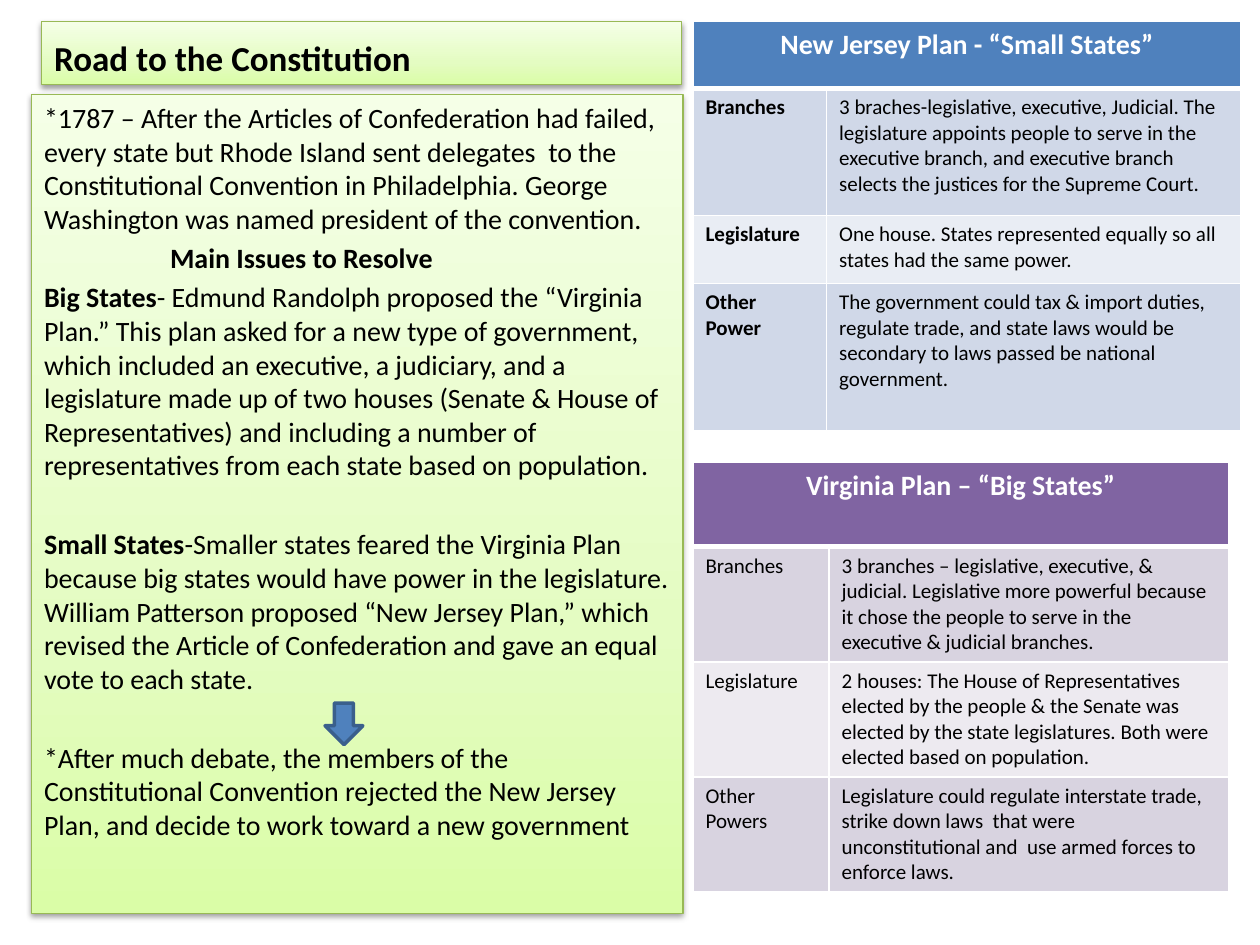
"""Build the Road to the Constitution slide."""
from pptx import Presentation
from pptx import oxml, util as u
from pptx.dml.color import RGBColor
from pptx.enum import shapes, text
from pptx.oxml import ns

BLACK = RGBColor(0x00, 0x00, 0x00)
WHITE = RGBColor(0xFF, 0xFF, 0xFF)
GREEN = RGBColor(0x98, 0xB9, 0x55)
BLUE = RGBColor(0x4F, 0x81, 0xBD)
NAVY = RGBColor(0x3A, 0x5F, 0x8C)
SKY = (RGBColor(0xD0, 0xD8, 0xE8), RGBColor(0xE9, 0xED, 0xF4))
PURPLE = RGBColor(0x80, 0x64, 0xA2)
LILAC = (RGBColor(0xD8, 0xD3, 0xE0), RGBColor(0xED, 0xEA, 0xF0))
STOPS = (
    (0, RGBColor(0xDA, 0xFD, 0xA7)),
    (35, RGBColor(0xE4, 0xFC, 0xC2)),
    (100, RGBColor(0xF5, 0xFF, 0xE7)),
)

STORY = [
    {"runs": [("*1787 – After the Articles of Confederation had failed, every state but Rhode Island sent delegates  to the Constitutional Convention in Philadelphia. George Washington was named president of the convention.", False)]},
    {"runs": [("Main Issues to Resolve", True)], "left": 1},
    {"runs": [("Big States", True), ("- Edmund Randolph proposed the “Virginia Plan.” This plan asked for a new type of government, which included an executive, a judiciary, and a legislature made up of two houses (Senate & House of Representatives) and including a number of representatives from each state based on population.", False)]},
    {"runs": [("Small States", True), ("-Smaller states feared the Virginia Plan because big states would have power in the legislature. William Patterson proposed “New Jersey Plan,” which revised the Article of Confederation and gave an equal vote to each state.", False)], "gap": 26},
    {"runs": [("*After much debate, the members of the Constitutional Convention rejected the New Jersey Plan, and decide to work toward a new government", False)], "gap": 26},
]
JERSEY = [
    ("Branches", "3 braches-legislative, executive, Judicial. The legislature appoints people to serve in the executive branch, and executive branch selects the justices for the Supreme Court."),
    ("Legislature", "One house. States represented equally so all states had the same power."),
    ("Other Power", "The government could tax & import duties, regulate trade, and state laws would be secondary to laws passed be national government."),
]
VIRGINIA = [
    ("Branches", "3 branches – legislative, executive, & judicial. Legislative more powerful because it chose the people to serve in the executive & judicial branches."),
    ("Legislature", "2 houses: The House of Representatives elected by the people & the Senate was elected by the state legislatures. Both were elected based on population."),
    ("Other Powers", "Legislature could regulate interstate trade, strike down laws  that were unconstitutional and  use armed forces to enforce laws."),
]


def write(para, words, size, bold=False, color=BLACK):
    """Add a formatted run to a paragraph."""
    run = para.add_run()
    run.text = words
    style = {"name": "Calibri", "size": u.Pt(size), "bold": bold}
    for key, value in style.items():
        setattr(run.font, key, value)
    run.font.color.rgb = color


def place(shape, box):
    """Move and size a shape in inches."""
    for key, value in zip(("left", "top", "width", "height"), box):
        setattr(shape, key, u.Inches(value))


def panel(shape, box, anchor):
    """Give a placeholder the green gradient, outline and shadow."""
    place(shape, box)
    stops = "".join(
        f'<a:gs pos="{pos * 1000}"><a:srgbClr val="{tint}"/></a:gs>' for pos, tint in STOPS
    )
    props = shape._element.spPr
    props.append(oxml.parse_xml(
        f'<a:gradFill {ns.nsdecls("a")} rotWithShape="1"><a:gsLst>{stops}</a:gsLst>'
        '<a:lin ang="16200000" scaled="1"/></a:gradFill>'
    ))
    shape.line.color.rgb = GREEN
    shape.line.width = u.Pt(0.75)
    props.append(oxml.parse_xml(
        f'<a:effectLst {ns.nsdecls("a")}><a:outerShdw blurRad="{u.Pt(3.1)}" dist="{u.Pt(1.6)}" '
        'dir="5400000" rotWithShape="0"><a:srgbClr val="000000"><a:alpha val="38000"/>'
        '</a:srgbClr></a:outerShdw></a:effectLst>'
    ))
    frame = shape.text_frame
    style = {"word_wrap": True, "auto_size": text.MSO_AUTO_SIZE.NONE, "vertical_anchor": anchor}
    for key, value in style.items():
        setattr(frame, key, value)
    return frame


def tell(frame):
    """Fill the body with unbulleted paragraphs."""
    for num, item in enumerate(STORY):
        para = frame.add_paragraph() if num else frame.paragraphs[0]
        para.space_before = u.Pt(item.get("gap", 3.2))
        props = para._p.get_or_add_pPr()
        props.set("marL", str(u.Inches(item.get("left", 0))))
        props.set("indent", "0")
        props.append(oxml.parse_xml(f'<a:buNone {ns.nsdecls("a")}/>'))
        for words, bold in item["runs"]:
            write(para, words, 16, bold)


def paint(cell, color, base=1):
    """Set a cell's white borders and its fill."""
    props = cell._tc.get_or_add_tcPr()
    for side, width in {"L": 1, "R": 1, "T": 1, "B": base}.items():
        props.append(oxml.parse_xml(
            f'<a:ln{side} {ns.nsdecls("a")} w="{u.Pt(width)}"><a:solidFill>'
            f'<a:srgbClr val="{WHITE}"/></a:solidFill></a:ln{side}>'
        ))
    cell.fill.solid()
    cell.fill.fore_color.rgb = color


def plan(slide, box, cols, tall, title, rows, head, bands, bold):
    """Add a table with a merged heading and banded rows."""
    grid = slide.shapes.add_table(len(tall), len(cols), *map(u.Inches, box)).table
    for col, width in zip(grid.columns, cols):
        col.width = u.Inches(width)
    for row, height in zip(grid.rows, tall):
        row.height = u.Inches(height)
    for cell in grid.rows[0].cells:
        paint(cell, head, 3)
    top = grid.cell(0, 0)
    top.merge(grid.cell(0, 1))
    para = top.text_frame.paragraphs[0]
    para.alignment = text.PP_ALIGN.CENTER
    write(para, title, 16, True, WHITE)
    for r, row in enumerate(rows):
        for c, words in enumerate(row):
            cell = grid.cell(r + 1, c)
            paint(cell, bands[r % 2])
            write(cell.text_frame.paragraphs[0], words, 12, bold and c == 0)


def arrow(slide, box):
    """Add the blue down arrow."""
    shape = slide.shapes.add_shape(shapes.MSO_SHAPE.DOWN_ARROW, *map(u.Inches, box))
    shape.shadow.inherit = False
    shape.fill.solid()
    shape.fill.fore_color.rgb = BLUE
    shape.line.color.rgb = NAVY
    shape.line.width = u.Pt(2)


def main():
    """Build and save the slide."""
    deck = Presentation()
    deck.slide_width, deck.slide_height = u.Inches(10), u.Inches(7.5)
    slide = deck.slides.add_slide(deck.slide_layouts[1])
    frame = panel(slide.shapes.title, (0.33, 0.17, 5.08, 0.5), text.MSO_ANCHOR.BOTTOM)
    frame.paragraphs[0].alignment = text.PP_ALIGN.LEFT
    write(frame.paragraphs[0], "Road to the Constitution", 20, True)
    tell(panel(slide.placeholders[1], (0.25, 0.75, 5.17, 6.5), text.MSO_ANCHOR.TOP))
    plan(slide, (5.5, 0.17, 4.35, 3.25), (1.06, 3.29), (0.53, 1.01, 0.54, 1.17),
         "New Jersey Plan - “Small States”", JERSEY, BLUE, SKY, True)
    plan(slide, (5.5, 3.67, 4.25, 3.37), (1.08, 3.17), (0.67, 0.9, 0.9, 0.9),
         "Virginia Plan – “Big States”", VIRGINIA, PURPLE, LILAC, False)
    arrow(slide, (2.58, 5.58, 0.3, 0.33))
    deck.save("out.pptx")


if __name__ == "__main__":
    main()
